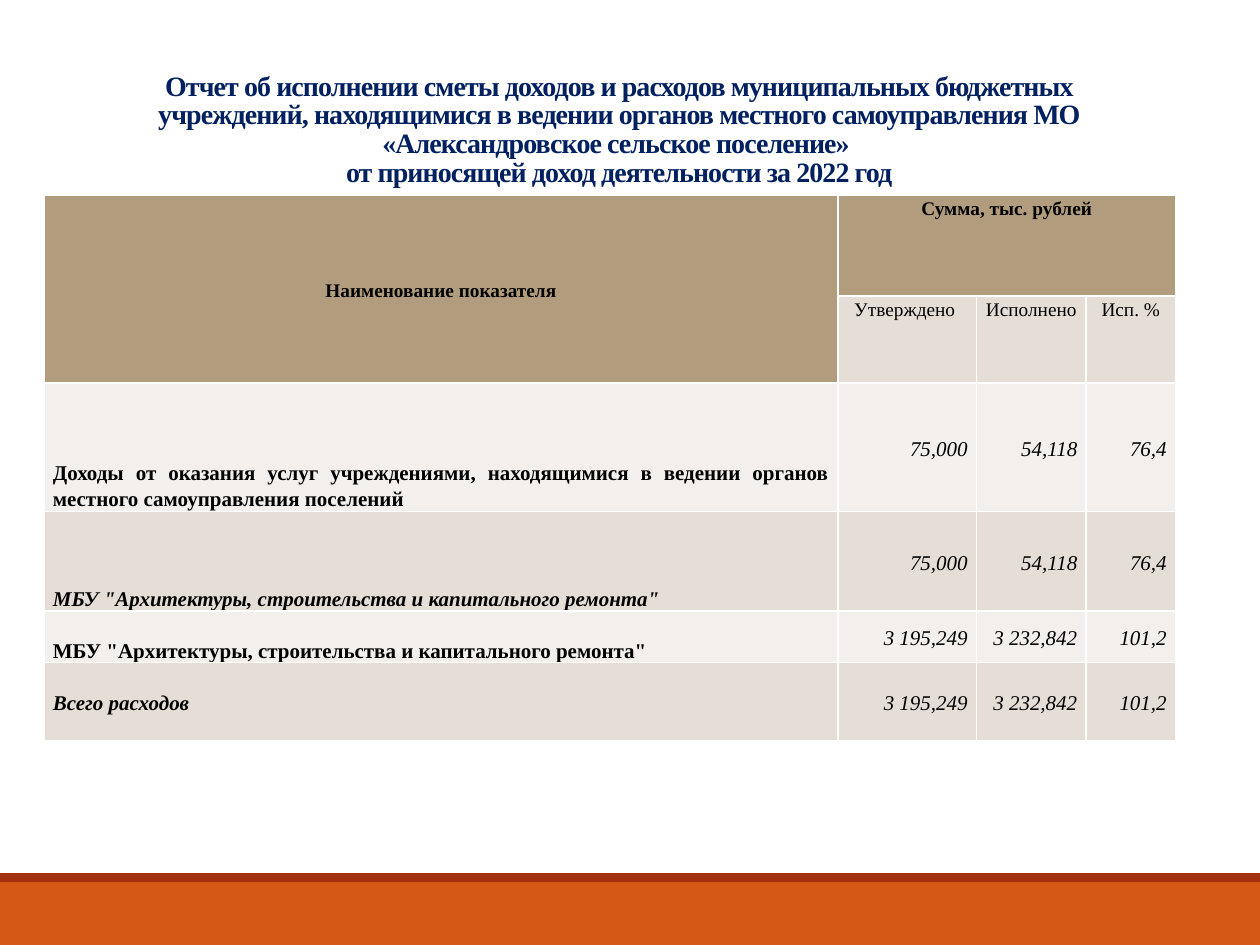
"""Build a slide with a table of income and expense execution for 2022."""
from dataclasses import dataclass

from pptx import Presentation
from pptx.dml.color import RGBColor
from pptx.enum.shapes import MSO_SHAPE
from pptx.enum.text import MSO_ANCHOR, MSO_AUTO_SIZE, PP_ALIGN
from pptx.util import Inches, Pt


@dataclass(frozen=True)
class Theme:
    font: str = "Times New Roman"
    title: str = "002060"
    text: str = "000000"
    header: str = "B19C7D"
    band_dark: str = "E4DED7"
    band_light: str = "F2EFEC"
    footer: str = "D55816"
    footer_edge: str = "A5300F"
    title_size: int = 16
    header_size: int = 11
    body_size: int = 12


theme = Theme()


def write_text(frame, text, size=theme.body_size, color=theme.text, bold=False, italic=False,
               align=PP_ALIGN.LEFT, line_spacing=1.15, tracking=0, hanging=0):
    paragraph = frame.paragraphs[0]
    paragraph.alignment = align
    paragraph.line_spacing = line_spacing
    if hanging:
        properties = paragraph._p.get_or_add_pPr()
        properties.set("marL", str(Inches(hanging)))
        properties.set("indent", str(-Inches(hanging)))
    for index, line in enumerate(text.split("\n")):
        if index:
            paragraph.add_line_break()
        run = paragraph.add_run()
        run.text = line
        run.font.name = theme.font
        run.font.size = Pt(size)
        run.font.bold = bold
        run.font.italic = italic
        run.font.color.rgb = RGBColor.from_string(color)
        if tracking:
            run._r.get_or_add_rPr().set("spc", str(int(tracking * 100)))


presentation = Presentation()
presentation.slide_width, presentation.slide_height = Inches(10), Inches(7.5)
slide = presentation.slides.add_slide(presentation.slide_layouts[5])

footer_top = Inches(7)
edge_height = Inches(0.07)
for top, height, color in (
    (footer_top, presentation.slide_height - footer_top, theme.footer),
    (footer_top - edge_height, edge_height, theme.footer_edge),
):
    band = slide.shapes.add_shape(MSO_SHAPE.RECTANGLE, 0, top, presentation.slide_width, height)
    band.shadow.inherit = False
    band.fill.solid()
    band.fill.fore_color.rgb = RGBColor.from_string(color)
    band.line.fill.background()

title = slide.shapes.title
title.left, title.top, title.width, title.height = map(Inches, (0.83, 0.29, 8.17, 1.25))
title.text_frame.word_wrap = True
title.text_frame.auto_size = MSO_AUTO_SIZE.NONE
title.text_frame.vertical_anchor = MSO_ANCHOR.BOTTOM
write_text(
    title.text_frame,
    "Отчет об исполнении сметы доходов и расходов муниципальных бюджетных учреждений, "
    "находящимися в ведении органов местного самоуправления МО «Александровское сельское поселение» \n"
    "от приносящей доход деятельности за 2022 год",
    size=theme.title_size, color=theme.title, bold=True,
    align=PP_ALIGN.CENTER, line_spacing=0.85, tracking=-0.5,
)

rows = [
    ("Наименование показателя", "Сумма, тыс. рублей", "", ""),
    ("", "Утверждено ", "Исполнено ", "Исп. %"),
    ("Доходы от оказания услуг учреждениями, находящимися в ведении органов местного "
     "самоуправления поселений", "75,000", "54,118", "76,4"),
    ('МБУ "Архитектуры, строительства и капитального ремонта" ', "75,000", "54,118", "76,4"),
    ('МБУ "Архитектуры, строительства и капитального ремонта" ', "3 195,249", "3 232,842", "101,2"),
    ("Всего расходов", "3 195,249", "3 232,842", "101,2"),
]
column_widths = (6.3, 1.1, 0.87, 0.71)
row_heights = (0.8, 0.69, 1.02, 0.79, 0.41, 0.62)
italic_labels = (3, 5)
last_row = len(rows) - 1

table = slide.shapes.add_table(
    len(rows), len(column_widths), Inches(0.35), Inches(1.55),
    Inches(sum(column_widths)), Inches(sum(row_heights)),
).table
for column, width in zip(table.columns, column_widths):
    column.width = Inches(width)
for row, height in zip(table.rows, row_heights):
    row.height = Inches(height)
table.cell(0, 0).merge(table.cell(1, 0))
table.cell(0, 1).merge(table.cell(0, 3))

for row_index, values in enumerate(rows):
    for column_index, value in enumerate(values):
        cell = table.cell(row_index, column_index)
        is_label = column_index == 0
        is_heading = row_index < 2
        is_header = row_index == 0 or (is_heading and is_label)
        band_color = theme.band_dark if row_index % 2 else theme.band_light
        cell.fill.solid()
        cell.fill.fore_color.rgb = RGBColor.from_string(theme.header if is_header else band_color)
        cell.margin_left = cell.margin_right = Inches(0.07)
        cell.margin_top = cell.margin_bottom = 0
        if cell.is_spanned:
            continue
        if is_heading:
            cell.vertical_anchor = MSO_ANCHOR.MIDDLE if is_label else MSO_ANCHOR.TOP
            write_text(cell.text_frame, value, size=theme.header_size, bold=is_header,
                       align=PP_ALIGN.CENTER, hanging=0.12 if (row_index, column_index) == (1, 2) else 0)
        elif is_label:
            is_total = row_index == last_row
            cell.vertical_anchor = MSO_ANCHOR.MIDDLE if is_total else MSO_ANCHOR.BOTTOM
            write_text(cell.text_frame, value, bold=True, italic=row_index in italic_labels,
                       align=PP_ALIGN.LEFT if is_total else PP_ALIGN.JUSTIFY)
        else:
            cell.vertical_anchor = MSO_ANCHOR.MIDDLE
            write_text(cell.text_frame, value, italic=True, align=PP_ALIGN.RIGHT)

presentation.save("out.pptx")
